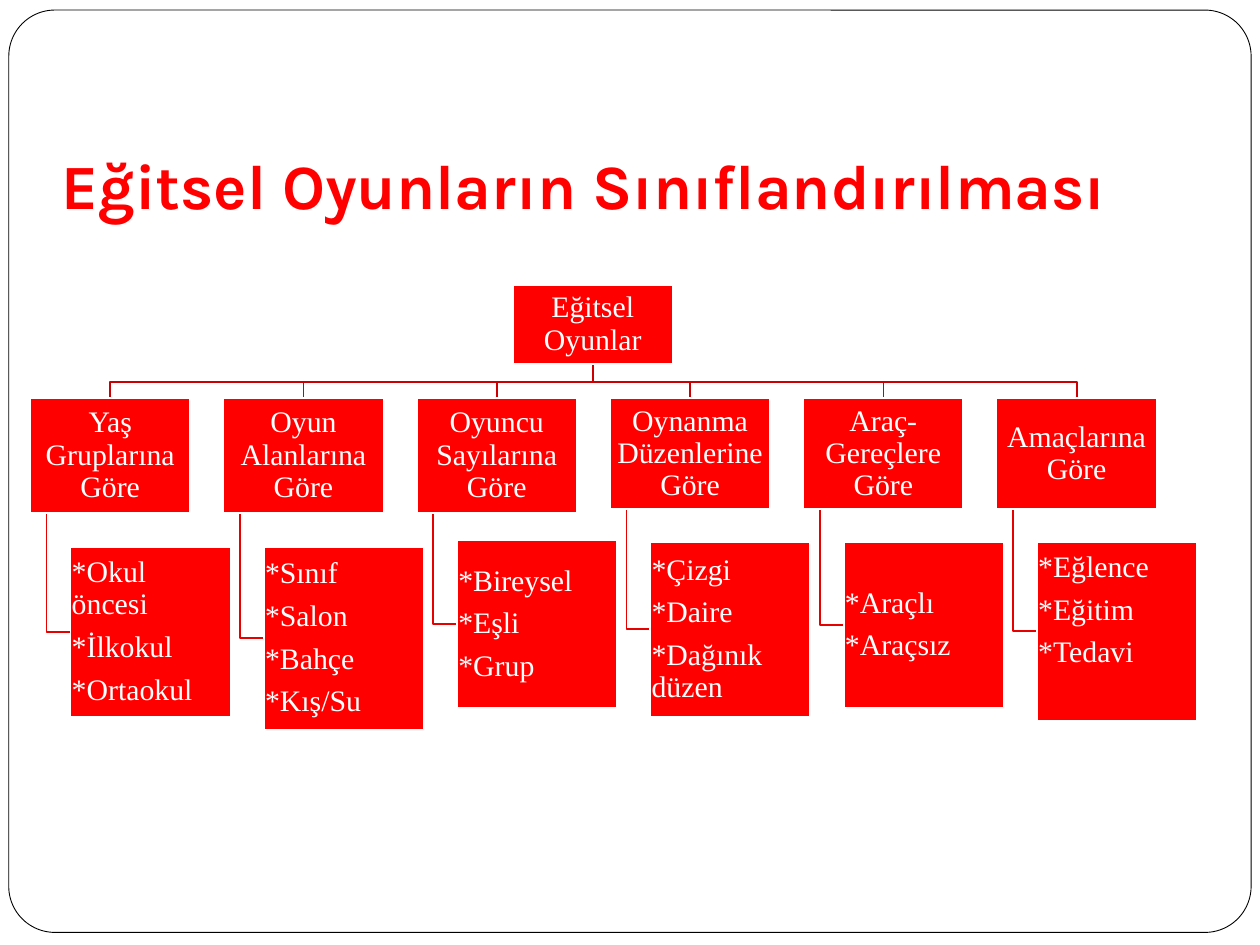
from dataclasses import dataclass

from lxml import etree
from pptx import Presentation
from pptx.dml.color import RGBColor
from pptx.enum.shapes import MSO_SHAPE
from pptx.enum.text import MSO_ANCHOR, PP_ALIGN
from pptx.util import Inches, Pt

CENTER, JUSTIFY = PP_ALIGN.CENTER, PP_ALIGN.JUSTIFY
MIDDLE, BOTTOM = MSO_ANCHOR.MIDDLE, MSO_ANCHOR.BOTTOM
RECTANGLE, ROUNDED = MSO_SHAPE.RECTANGLE, MSO_SHAPE.ROUNDED_RECTANGLE

COLORS = {
    "red": "FF0000",
    "trunk": "CC0000",
    "branch": "E70000",
    "white": "FFFFFF",
    "black": "000000",
}

# Chart geometry, in inches
BOX_WIDTH = 1.27
ROOT_LEFT, ROOT_TOP, ROOT_HEIGHT = 4.07, 2.26, 0.63
CATEGORY_LEFT, CATEGORY_TOP = 0.24, 3.16
CATEGORY_PITCH = (7.91 - CATEGORY_LEFT) / 5
BUS_Y = 3.03
BRANCH_INDENT, GAMES_INDENT = 0.13, 0.32
INSET = 0.01


@dataclass
class Category:
    title: str
    height: float
    games: list[str]
    games_top: float
    games_height: float
    bottom_inset: float = INSET


CATEGORIES = [
    Category("Yaş Gruplarına Göre", 0.91, ["*Okul öncesi", "*İlkokul", "*Ortaokul"], 4.34, 1.35),
    Category("Oyun Alanlarına Göre", 0.91, ["*Sınıf", "*Salon", "*Bahçe", "*Kış/Su"], 4.34, 1.45),
    Category("Oyuncu Sayılarına Göre", 0.91, ["*Bireysel", "*Eşli", "*Grup"], 4.29, 1.33),
    Category("Oynanma Düzenlerine Göre", 0.88, ["*Çizgi", "*Daire", "*Dağınık düzen"], 4.3, 1.39),
    Category("Araç-Gereçlere Göre", 0.88, ["*Araçlı", "*Araçsız"], 4.3, 1.32),
    Category("Amaçlarına Göre", 0.88, ["*Eğlence", "*Eğitim", "*Tedavi"], 4.3, 1.42, 0.34),
]


def rgb(name: str) -> RGBColor:
    return RGBColor.from_string(COLORS[name])


def add_panel(slide, preset, left: float, top: float, width: float, height: float,
              fill: str, line: str, line_width: float):
    panel = slide.shapes.add_shape(
        preset, Inches(left), Inches(top), Inches(width), Inches(height))
    panel.shadow.inherit = False
    panel.fill.solid()
    panel.fill.fore_color.rgb = rgb(fill)
    panel.line.color.rgb = rgb(line)
    panel.line.width = Pt(line_width)
    return panel


def add_box(slide, left: float, top: float, height: float, lines: list[str],
            alignment=CENTER, bottom_inset: float = INSET) -> None:
    box = add_panel(slide, RECTANGLE, left, top, BOX_WIDTH, height, "red", "white", 1)
    frame = box.text_frame
    frame.word_wrap = True
    frame.vertical_anchor = MIDDLE
    frame.margin_left = frame.margin_right = frame.margin_top = Inches(INSET)
    frame.margin_bottom = Inches(bottom_inset)
    for index, line in enumerate(lines):
        paragraph = frame.paragraphs[0] if index == 0 else frame.add_paragraph()
        paragraph.text = line
        paragraph.alignment = alignment
        paragraph.line_spacing = 0.9
        paragraph.space_after = Pt(6)
        paragraph.font.name = "Times New Roman"
        paragraph.font.size = Pt(17)
        paragraph.font.color.rgb = rgb("white")


def add_elbow(slide, points: list[tuple[float, float]], color: str) -> None:
    start, *rest = [(Inches(x), Inches(y)) for x, y in points]
    builder = slide.shapes.build_freeform(*start)
    builder.add_line_segments(rest, close=False)
    elbow = builder.convert_to_shape()
    elbow.shadow.inherit = False
    elbow.fill.background()
    elbow.line.color.rgb = rgb(color)
    elbow.line.width = Pt(1)


def add_title(slide, text: str) -> None:
    title = slide.shapes.add_textbox(Inches(0.39), Inches(0.31), Inches(9.03), Inches(1.55))
    frame = title.text_frame
    frame.word_wrap = True
    frame.vertical_anchor = BOTTOM
    frame.margin_bottom = Inches(0.1)
    paragraph = frame.paragraphs[0]
    paragraph.text = text
    paragraph.font.name = "Karla"
    paragraph.font.size = Pt(36)
    paragraph.font.bold = True
    paragraph.font.color.rgb = rgb("red")


def add_category_lines(slide, left: float, category: Category) -> None:
    root_x = ROOT_LEFT + BOX_WIDTH / 2
    center_x = left + BOX_WIDTH / 2
    add_elbow(slide, [(root_x, ROOT_TOP + ROOT_HEIGHT), (root_x, BUS_Y),
                      (center_x, BUS_Y), (center_x, CATEGORY_TOP)], "trunk")
    branch_x = left + BRANCH_INDENT
    games_y = category.games_top + category.games_height / 2
    add_elbow(slide, [(branch_x, CATEGORY_TOP + category.height), (branch_x, games_y),
                      (left + GAMES_INDENT, games_y)], "branch")


def add_category_boxes(slide, left: float, category: Category) -> None:
    add_box(slide, left, CATEGORY_TOP, category.height, [category.title])
    add_box(slide, left + GAMES_INDENT, category.games_top, category.games_height,
            category.games, JUSTIFY, category.bottom_inset)


def main() -> None:
    presentation = Presentation()
    presentation.slide_width, presentation.slide_height = Inches(10), Inches(7.5)
    slide = presentation.slides.add_slide(presentation.slide_layouts[6])

    # Frame and title
    border = add_panel(slide, ROUNDED, 0.07, 0.08, 9.86, 7.32, "white", "black", 0.5)
    border.adjustments[0] = 0.05
    add_title(slide, "Eğitsel Oyunların Sınıflandırılması")

    # Connecting lines lie behind the boxes
    columns = [(CATEGORY_LEFT + i * CATEGORY_PITCH, category)
               for i, category in enumerate(CATEGORIES)]
    for left, category in columns:
        add_category_lines(slide, left, category)

    # Root, categories and their games
    add_box(slide, ROOT_LEFT, ROOT_TOP, ROOT_HEIGHT, ["Eğitsel Oyunlar"])
    for left, category in columns:
        add_category_boxes(slide, left, category)

    presentation.save("out.pptx")


if __name__ == "__main__":
    main()
